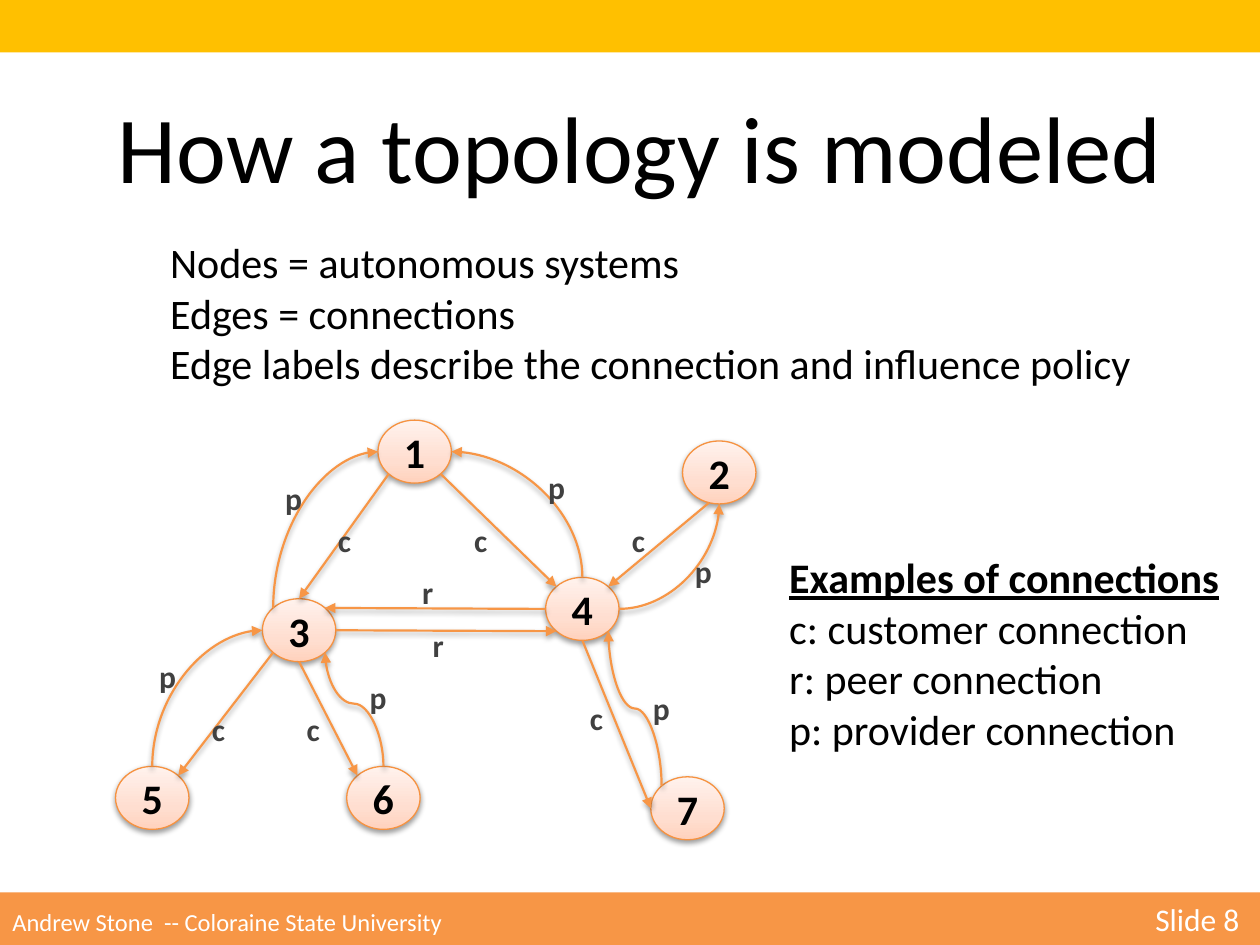
import math

import lxml.etree
import pptx
import pptx.dml.color
import pptx.enum.shapes
import pptx.enum.text
import pptx.oxml.ns
import pptx.util

Cm = pptx.util.Cm
qn = pptx.oxml.ns.qn
ALIGN = pptx.enum.text.PP_ALIGN
SHAPE = pptx.enum.shapes.MSO_SHAPE
CONNECTOR = pptx.enum.shapes.MSO_CONNECTOR

COLORS = {
    "top_band": "FFC000", "orange": "F79646", "node_line": "F69240",
    "ink": "000000", "label": "404040", "white": "FFFFFF",
}
NODE_GRADIENT = [(0, "FFD2BD"), (35000, "FFDED0"), (100000, "FFF2ED")]
NODE_W, NODE_H = 1.48, 1.27
BAND_H = 1.06

# Connection sites of an ellipse, counter-clockwise from the top in steps of 45 degrees.
SITES = {"N": 0, "NW": 1, "W": 2, "SW": 3, "SSW": 3.64, "S": 4, "SE": 5, "E": 6, "NE": 7}

NODES = {
    "1": (7.62, 8.47), "2": (13.76, 8.89), "3": (5.29, 12.07), "4": (11, 11.64),
    "5": (2.33, 15.45), "6": (6.99, 15.45), "7": (13.12, 15.66),
}
STRAIGHT_EDGES = [
    ("1", "SE", "4", "NW"), ("1", "SW", "3", "N"), ("3", "SW", "5", "NE"),
    ("3", "S", "6", "NW"), ("4", "S", "7", "W"), ("2", "SSW", "4", "NE"),
    ("4", "W", "3", "NE"), ("3", "E", "4", "SW"),
]
# The last value is the bend of an S-curve; None makes a quarter curve.
CURVED_EDGES = [
    ("4", "N", "1", "E", None), ("3", "NW", "1", "W", None), ("4", "E", "2", "S", None),
    ("5", "N", "3", "W", None), ("7", "NW", "4", "SE", 0.5), ("6", "N", "3", "SE", 0.55),
]
LABEL_WIDTHS = {"p": 0.86, "c": 0.79, "r": 0.74}
EDGE_LABELS = {
    "p": [(2.96, 13.12), (5.5, 9.53), (7.2, 13.55), (10.8, 9.31), (12.91, 13.76), (13.76, 11)],
    "c": [(6.56, 10.37), (9.31, 10.37), (12.49, 10.37), (11.64, 13.97), (5.93, 14.18), (4.02, 14.18)],
    "r": [(8.26, 11.43), (8.47, 12.49)],
}


def add_xml(parent, tag, **attributes):
    return lxml.etree.SubElement(parent, qn(tag), {k: str(v) for k, v in attributes.items()})


class TopologySlide:
    def __init__(self, slide, font="Calibri"):
        self.slide = slide
        self.font = font
        self.nodes = {}

    def rgb(self, name):
        return pptx.dml.color.RGBColor.from_string(COLORS[name])

    def format_run(self, run, size, color, bold=False, underline=False):
        run.font.name = self.font
        run.font.size = pptx.util.Pt(size)
        run.font.color.rgb = self.rgb(color)
        run.font.bold = bold
        run.font.underline = underline

    def add_shadow(self, shape, distance, opacity):
        """Drop a soft shadow; fill and line must already be set."""
        effects = add_xml(shape._element.spPr, "a:effectLst")
        shadow = add_xml(effects, "a:outerShdw", blurRad=40000, dist=distance,
                         dir=5400000, rotWithShape=0)
        black = add_xml(shadow, "a:srgbClr", val=COLORS["ink"])
        add_xml(black, "a:alpha", val=opacity)

    def band(self, top, color):
        band = self.slide.shapes.add_shape(SHAPE.RECTANGLE, 0, Cm(top), Cm(25.4), Cm(BAND_H))
        band.fill.solid()
        band.fill.fore_color.rgb = self.rgb(color)
        band.line.fill.background()
        band.shadow.inherit = False
        return band

    def footer(self, author, number):
        frame = self.band(19.05 - BAND_H, "orange").text_frame
        frame.vertical_anchor = pptx.enum.text.MSO_ANCHOR.MIDDLE
        paragraph = frame.paragraphs[0]
        paragraph.text = author + "\t"
        paragraph.alignment = ALIGN.LEFT
        tabs = add_xml(paragraph._p.get_or_add_pPr(), "a:tabLst")
        add_xml(tabs, "a:tab", pos=Cm(23.04), algn="l")
        self.format_run(paragraph.runs[0], 14, "white")
        page = paragraph.add_run()
        page.text = number
        self.format_run(page, 18, "white")

    def text(self, box, content, size, color="ink", bold=False, align=ALIGN.LEFT):
        frame = self.slide.shapes.add_textbox(*map(Cm, box)).text_frame
        frame.text = content
        frame.word_wrap = False
        frame.auto_size = pptx.enum.text.MSO_AUTO_SIZE.SHAPE_TO_FIT_TEXT
        for paragraph in frame.paragraphs:
            paragraph.alignment = align
            for run in paragraph.runs:
                self.format_run(run, size, color, bold)
        return frame

    def node(self, name, left, top):
        node = self.slide.shapes.add_shape(SHAPE.OVAL, Cm(left), Cm(top), Cm(NODE_W), Cm(NODE_H))
        node.fill.gradient()
        node.fill.gradient_angle = 90
        stops = node._element.spPr.find(qn("a:gradFill")).find(qn("a:gsLst"))
        for stop in list(stops):
            stops.remove(stop)
        for position, color in NODE_GRADIENT:
            add_xml(add_xml(stops, "a:gs", pos=position), "a:srgbClr", val=color)
        node.line.color.rgb = self.rgb("node_line")
        node.line.width = pptx.util.Pt(0.75)
        self.add_shadow(node, 20000, 38000)
        frame = node.text_frame
        frame.text = name
        frame.word_wrap = False
        frame.vertical_anchor = pptx.enum.text.MSO_ANCHOR.MIDDLE
        frame.paragraphs[0].alignment = ALIGN.CENTER
        self.format_run(frame.paragraphs[0].runs[0], 24, "ink", bold=True)
        self.nodes[name] = node

    def site_point(self, name, site):
        left, top = NODES[name]
        angle = math.radians(-90 - 45 * SITES[site])
        return (left + NODE_W / 2 * (1 + math.cos(angle)),
                top + NODE_H / 2 * (1 + math.sin(angle)))

    def connector(self, kind, begin, end, glue):
        """Draw an arrow; glue lists the (node, site) at its begin and end."""
        edge = self.slide.shapes.add_connector(kind, *map(Cm, begin + end))
        edge.line.color.rgb = self.rgb("orange")
        edge.line.width = pptx.util.Pt(1.25)
        add_xml(edge._element.spPr.find(qn("a:ln")), "a:tailEnd", type="triangle")
        self.add_shadow(edge, 23000, 35000)
        joints = edge._element.nvCxnSpPr.cNvCxnSpPr
        for tag, (name, site) in zip(("a:stCxn", "a:endCxn"), glue):
            if isinstance(SITES[site], int):
                add_xml(joints, tag, id=self.nodes[name].shape_id, idx=SITES[site])
        return edge

    def straight_edge(self, source, source_site, target, target_site):
        glue = [(source, source_site), (target, target_site)]
        begin, end = (self.site_point(*joint) for joint in glue)
        self.connector(CONNECTOR.STRAIGHT, begin, end, glue)

    def curved_edge(self, source, source_site, target, target_site, bend):
        """Curve that leaves upwards, or sideways when it starts at the east site."""
        glue = [(source, source_site), (target, target_site)]
        begin, end = (self.site_point(*joint) for joint in glue)
        upwards = source_site != "E"
        if upwards:
            # Lay the curve on its side here; the rotation below turns it upright.
            x, y = (begin[0] + end[0]) / 2, (begin[1] + end[1]) / 2
            dx, dy = (end[0] - begin[0]) / 2, (end[1] - begin[1]) / 2
            begin, end = (x + dy, y - dx), (x - dy, y + dx)
        edge = self.connector(CONNECTOR.CURVE, begin, end, glue)
        properties = edge._element.spPr
        if upwards:
            properties.find(qn("a:xfrm")).set("rot", "16200000")
        geometry = properties.find(qn("a:prstGeom"))
        if bend is None:
            geometry.set("prst", "curvedConnector2")
        else:
            add_xml(geometry.find(qn("a:avLst")), "a:gd", name="adj1",
                    fmla=f"val {round(bend * 100000)}")


def main():
    presentation = pptx.Presentation()
    presentation.slide_width, presentation.slide_height = Cm(25.4), Cm(19.05)
    topology = TopologySlide(presentation.slides.add_slide(presentation.slide_layouts[6]))

    topology.band(0, "top_band")
    topology.text((2, 1.68, 21.8, 2.57), "How a topology is modeled", 54, align=ALIGN.CENTER)
    topology.text((3.18, 4.65, 20.1, 3.33),
                  "Nodes = autonomous systems\nEdges = connections\n"
                  "Edge labels describe the connection and influence policy", 24)
    for name, position in NODES.items():
        topology.node(name, *position)
    for edge in STRAIGHT_EDGES:
        topology.straight_edge(*edge)
    for edge in CURVED_EDGES:
        topology.curved_edge(*edge)
    legend = topology.text((15.66, 11, 9.27, 4.37),
                           "Examples of connections\nc: customer connection\n"
                           "r: peer connection\np: provider connection", 24)
    topology.format_run(legend.paragraphs[0].runs[0], 24, "ink", bold=True, underline=True)
    for letter, positions in EDGE_LABELS.items():
        for left, top in positions:
            topology.text((left, top, LABEL_WIDTHS[letter], 1.02), letter, 18, "label", bold=True)
    topology.footer("Andrew Stone  -- Coloraine State University ", "Slide 8")

    presentation.save("out.pptx")


if __name__ == "__main__":
    main()
